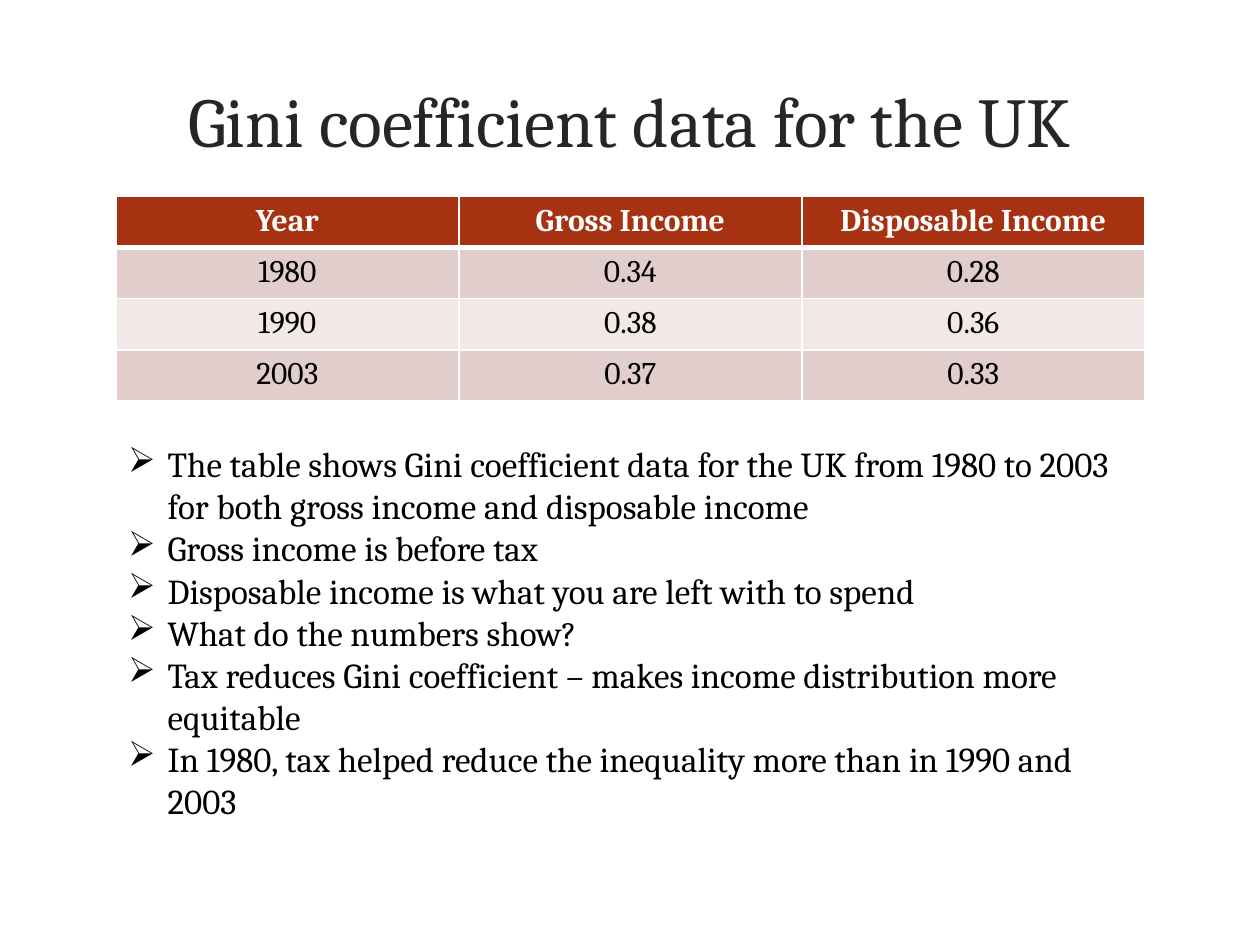
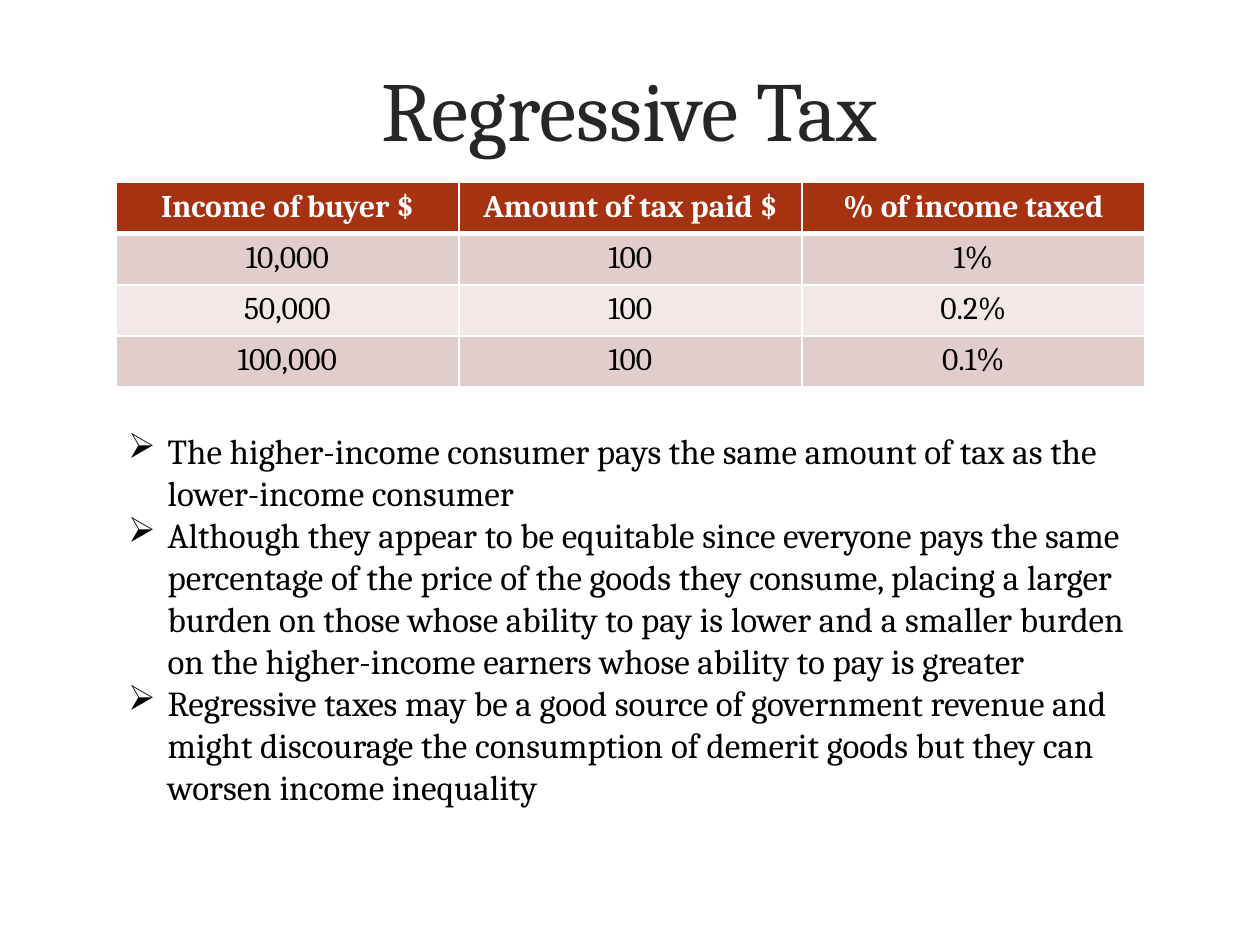
from dataclasses import dataclass

from lxml.etree import SubElement
from pptx import Presentation
from pptx.dml.color import RGBColor
from pptx.enum.text import MSO_ANCHOR, MSO_AUTO_SIZE, PP_ALIGN
from pptx.oxml.ns import qn
from pptx.util import Pt

SLIDES = [
    {
        "title": "Gini coefficient data for the UK",
        "title_size": 40,
        "title_height": 67.7,
        "table_top": 112.3,
        "notes_height": 225.4,
        "rows": [
            ("Year", "Gross Income", "Disposable Income"),
            ("1980", "0.34", "0.28"),
            ("1990", "0.38", "0.36"),
            ("2003", "0.37", "0.33"),
        ],
        "points": [
            "The table shows Gini coefficient data for the UK from 1980 to 2003 "
            "for both gross income and disposable income",
            "Gross income is before tax",
            "Disposable income is what you are left with to spend",
            "What do the numbers show?",
            "Tax reduces Gini coefficient – makes income distribution more equitable",
            "In 1980, tax helped reduce the inequality more than in 1990 and 2003",
        ],
    },
    {
        "title": "Regressive Tax",
        "title_size": 48,
        "title_height": 54,
        "table_top": 104.4,
        "notes_height": 249.8,
        "rows": [
            ("Income of buyer $", "Amount of tax paid $", "% of income taxed"),
            ("10,000", "100", "1%"),
            ("50,000", "100", "0.2%"),
            ("100,000", "100", "0.1%"),
        ],
        "points": [
            "The higher-income consumer pays the same amount of tax as the "
            "lower-income consumer",
            "Although they appear to be equitable since everyone pays the same "
            "percentage of the price of the goods they consume, placing a larger "
            "burden on those whose ability to pay is lower and a smaller burden "
            "on the higher-income earners whose ability to pay is greater",
            "Regressive taxes may be a good source of government revenue and "
            "might discourage the consumption of demerit goods but they can "
            "worsen income inequality",
        ],
    },
]

TITLE_LEFT, TITLE_TOP, TITLE_WIDTH = 43.2, 34.6, 633
LEFT, WIDTH = 66.2, 588
ROW_HEIGHT = 29.2
TABLE_GAP = 20.5
INDENT = 22.5


@dataclass(frozen=True)
class Theme:
    """Colours, font and type sizes shared by all slides."""

    font: str = "Cambria"
    title: str = "262626"
    text: str = "000000"
    white: str = "FFFFFF"
    header: str = "A63212"
    bands: tuple = ("E1CECC", "F1E8E7")
    cell_size: int = 18
    body_size: int = 20


THEME = Theme()


def style(p, size, color, bold=False, align=PP_ALIGN.LEFT):
    p.alignment = align
    for r in p.runs:
        r.font.name = THEME.font
        r.font.size = Pt(size)
        r.font.bold = bold
        r.font.color.rgb = RGBColor.from_string(color)


def add_borders(cell, widths):
    tcPr = cell._tc.get_or_add_tcPr()
    for side, width in zip("LRTB", widths):
        ln = SubElement(tcPr, qn(f"a:ln{side}"), w=str(Pt(width)))
        fill = SubElement(ln, qn("a:solidFill"))
        SubElement(fill, qn("a:srgbClr"), val=THEME.white)


def set_title(s, content):
    sp = s.shapes.title
    sp.left, sp.top = Pt(TITLE_LEFT), Pt(TITLE_TOP)
    sp.width, sp.height = Pt(TITLE_WIDTH), Pt(content["title_height"])
    tf = sp.text_frame
    tf.text = content["title"]
    tf.auto_size = MSO_AUTO_SIZE.NONE
    tf.vertical_anchor = MSO_ANCHOR.MIDDLE
    style(tf.paragraphs[0], content["title_size"], THEME.title, align=PP_ALIGN.CENTER)


def add_data_table(s, rows, top):
    columns = len(rows[0])
    table = s.shapes.add_table(
        len(rows), columns, Pt(LEFT), Pt(top), Pt(WIDTH), Pt(ROW_HEIGHT * len(rows))
    ).table
    for column in table.columns:
        column.width = Pt(WIDTH / columns)
    for i, values in enumerate(rows):
        table.rows[i].height = Pt(ROW_HEIGHT)
        is_header = i == 0
        fill = THEME.header if is_header else THEME.bands[(i - 1) % 2]
        color = THEME.white if is_header else THEME.text
        for j, value in enumerate(values):
            cell = table.cell(i, j)
            cell.text = value
            add_borders(cell, (1, 1, 3 if i == 1 else 1, 3 if is_header else 1))
            cell.fill.solid()
            cell.fill.fore_color.rgb = RGBColor.from_string(fill)
            p = cell.text_frame.paragraphs[0]
            style(p, THEME.cell_size, color, is_header, PP_ALIGN.CENTER)


def add_points(s, points, top, height):
    tf = s.shapes.add_textbox(Pt(LEFT), Pt(top), Pt(WIDTH), Pt(height)).text_frame
    tf.word_wrap = True
    tf.auto_size = MSO_AUTO_SIZE.SHAPE_TO_FIT_TEXT
    tf.text = "\n".join(points)
    for p in tf.paragraphs:
        pPr = p._p.get_or_add_pPr()
        pPr.set("marL", str(Pt(INDENT)))
        pPr.set("indent", str(-Pt(INDENT)))
        SubElement(pPr, qn("a:buChar"), char="➢")
        style(p, THEME.body_size, THEME.text)


def main():
    """Build a deck of titled data tables with bulleted remarks."""
    prs = Presentation()
    prs.slide_width, prs.slide_height = Pt(720), Pt(540)
    for content in SLIDES:
        s = prs.slides.add_slide(prs.slide_layouts[5])
        rows, top = content["rows"], content["table_top"]
        set_title(s, content)
        add_data_table(s, rows, top)
        points_top = top + ROW_HEIGHT * len(rows) + TABLE_GAP
        add_points(s, content["points"], points_top, content["notes_height"])
    prs.save("out.pptx")


if __name__ == "__main__":
    main()
